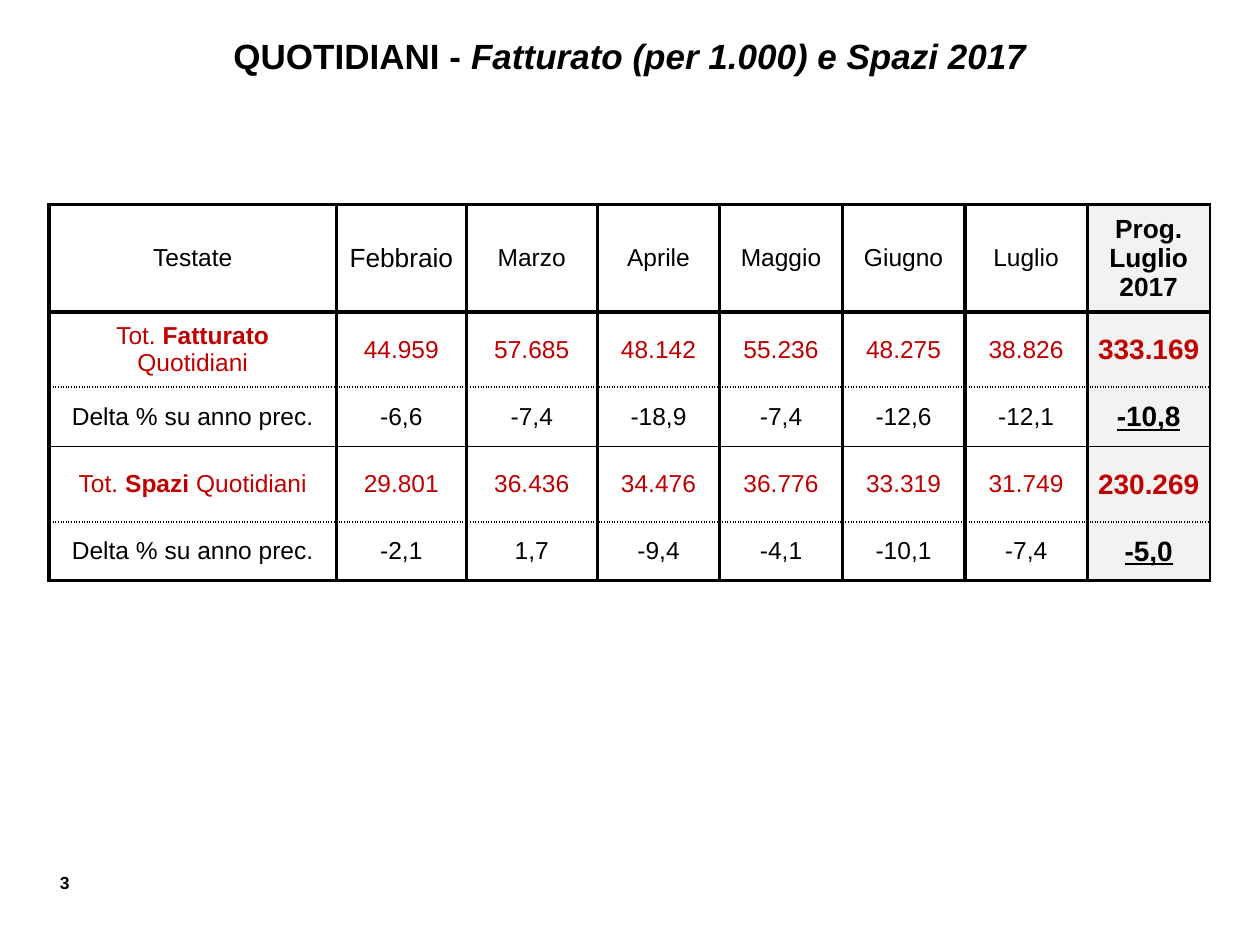
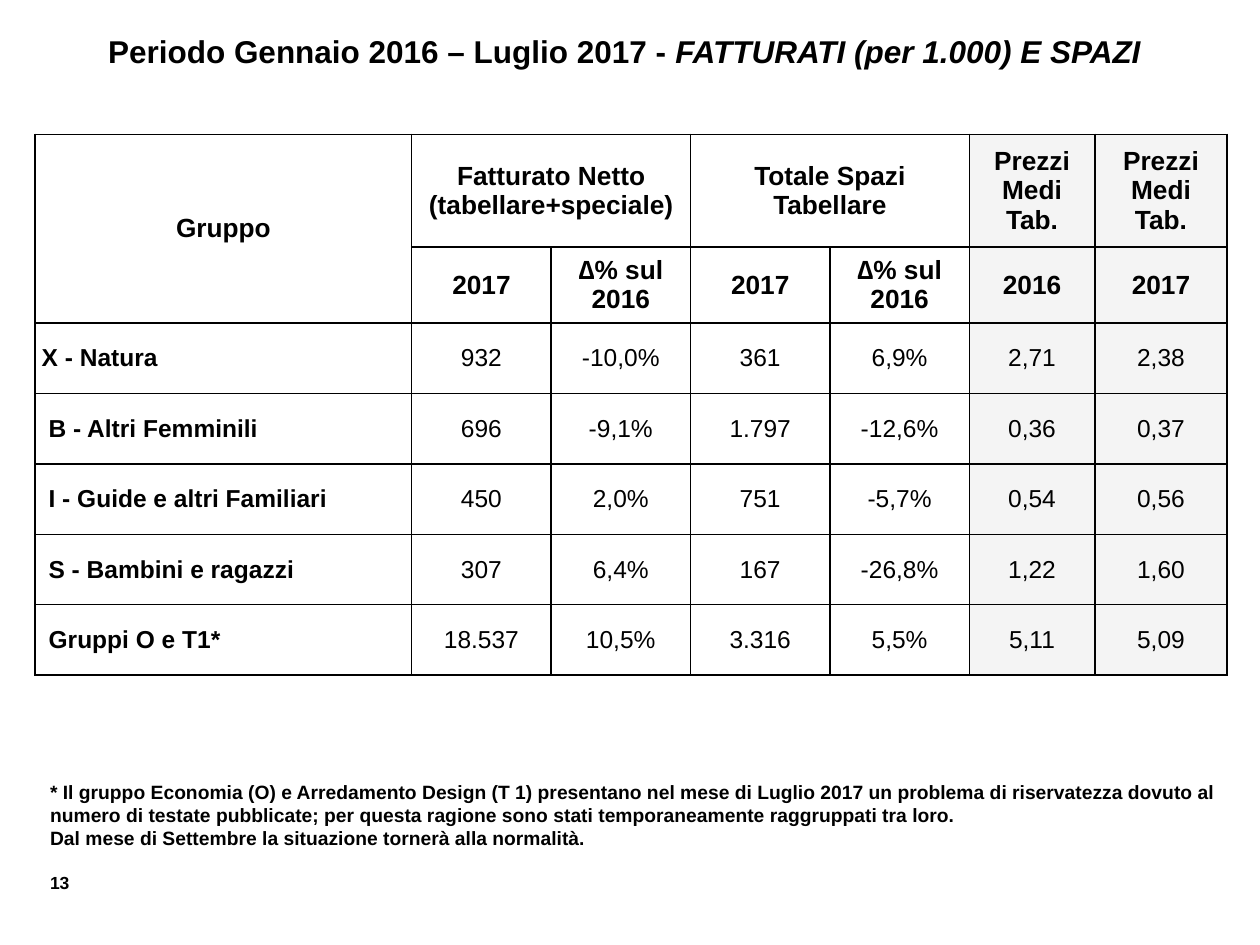
from dataclasses import dataclass
from typing import NamedTuple

from lxml import etree
from pptx import Presentation
from pptx.dml.color import RGBColor
from pptx.enum.text import MSO_ANCHOR, PP_ALIGN
from pptx.oxml.ns import qn
from pptx.util import Cm, Pt

LEFT, CENTER, RIGHT = PP_ALIGN.LEFT, PP_ALIGN.CENTER, PP_ALIGN.RIGHT
MIDDLE = MSO_ANCHOR.MIDDLE
FONT = "Arial"
COLORS = {"ink": "000000", "total": "C00000", "shade": "F2F2F2"}


class Run(NamedTuple):
    text: str
    size: float = 14
    bold: bool = False
    italic: bool = False
    underline: bool = False
    color: str = "ink"


class Rule(NamedTuple):
    points: float
    dash: str = "solid"


class Box(NamedTuple):
    left: float
    top: float
    width: float
    height: float


@dataclass
class Entry:
    runs: list[Run]
    align: PP_ALIGN = CENTER
    padded: bool = False
    indent: float = 0


@dataclass
class Grid:
    left: float
    top: float
    widths: list[float]
    heights: list[float]
    row_rules: list[Rule]
    column_rules: list[Rule]
    shaded_from: int
    opacity: int
    rows: list[list[Entry | None]]
    merges: list[tuple[int, int, int, int]]


THICK, THIN, DOTTED = Rule(2.25), Rule(1), Rule(1, "sysDot")


def write_runs(paragraph, runs: list[Run], align: PP_ALIGN) -> None:
    paragraph.alignment = align
    for run in runs:
        piece = paragraph.add_run()
        piece.text = run.text
        font = piece.font
        font.name, font.size = FONT, Pt(run.size)
        font.bold, font.italic, font.underline = run.bold, run.italic, run.underline
        font.color.rgb = RGBColor.from_string(COLORS[run.color])


def add_text(slide, box: Box, paragraphs: list[list[Run]], align: PP_ALIGN) -> None:
    frame = slide.shapes.add_textbox(*(Cm(length) for length in box)).text_frame
    frame.word_wrap = True
    for index, runs in enumerate(paragraphs):
        paragraph = frame.add_paragraph() if index else frame.paragraphs[0]
        write_runs(paragraph, runs, align)


def add_border(properties, side: str, rule: Rule) -> None:
    line = etree.SubElement(properties, qn(f"a:ln{side}"), w=str(Pt(rule.points)))
    fill = etree.SubElement(line, qn("a:solidFill"))
    etree.SubElement(fill, qn("a:srgbClr"), val=COLORS["ink"])
    etree.SubElement(line, qn("a:prstDash"), val=rule.dash)


def shade(cell, opacity: int) -> None:
    cell.fill.solid()
    cell.fill.fore_color.rgb = RGBColor.from_string(COLORS["shade"])
    if opacity < 100:
        color = cell._tc.tcPr.find(qn("a:solidFill")).find(qn("a:srgbClr"))
        etree.SubElement(color, qn("a:alpha"), val=str(opacity * 1000))


def fill_entry(cell, entry: Entry) -> None:
    side, edge = (0.25, 0.13) if entry.padded else (0, 0)
    cell.margin_left, cell.margin_right = Cm(side + entry.indent), Cm(side)
    cell.margin_top = cell.margin_bottom = Cm(edge)
    cell.vertical_anchor = MIDDLE
    write_runs(cell.text_frame.paragraphs[0], entry.runs, entry.align)


def add_grid(slide, grid: Grid) -> None:
    table = slide.shapes.add_table(
        len(grid.heights), len(grid.widths), Cm(grid.left), Cm(grid.top),
        Cm(sum(grid.widths)), Cm(sum(grid.heights)),
    ).table
    table.first_row = table.horz_banding = False
    for column, width in zip(table.columns, grid.widths):
        column.width = Cm(width)
    for row, height in zip(table.rows, grid.heights):
        row.height = Cm(height)
    for top, left, bottom, right in grid.merges:
        table.cell(top, left).merge(table.cell(bottom, right))
    for r, entries in enumerate(grid.rows):
        for c, entry in enumerate(entries):
            cell = table.cell(r, c)
            properties = cell._tc.get_or_add_tcPr()
            add_border(properties, "L", grid.column_rules[c])
            add_border(properties, "R", grid.column_rules[c + 1])
            add_border(properties, "T", grid.row_rules[r])
            add_border(properties, "B", grid.row_rules[r + 1])
            if c >= grid.shaded_from:
                shade(cell, grid.opacity)
            else:
                cell.fill.background()
            if entry:
                fill_entry(cell, entry)


def add_page(deck, title_box: Box, title: list[Run], number: int):
    slide = deck.slides.add_slide(deck.slide_layouts[6])
    add_text(slide, Box(0.48, 17.45, 1.17, 0.69),
             [[Run(str(number), 10, bold=True)]], RIGHT)
    add_text(slide, title_box, [title], CENTER)
    return slide


def daily_row(label: list[Run], values: str, is_total: bool) -> list[Entry]:
    color = "total" if is_total else "ink"
    *months, progressive = values.split()
    return [
        Entry([run._replace(color=color) for run in label], padded=True),
        *(Entry([Run(value, color=color)]) for value in months),
        Entry([Run(progressive, 16, True, underline=not is_total, color=color)]),
    ]


def daily_grid() -> Grid:
    months = ["Testate", "Febbraio", "Marzo", "Aprile", "Maggio", "Giugno", "Luglio"]
    header = [Entry([Run(month, 15 if month == "Febbraio" else 14)], padded=True)
              for month in months]
    header.append(Entry([Run("Prog. Luglio 2017", 15, True)], padded=True))
    delta = [Run("Delta % su anno prec.")]

    def total(subject: str) -> list[Run]:
        return [Run("Tot. "), Run(f"{subject} ", bold=True), Run("Quotidiani")]

    return Grid(
        left=0.99, top=4.12,
        widths=[5.79, 2.62, 2.64] + [2.47] * 5,
        heights=[2.16, 1.52, 1.2, 1.52, 1.18],
        row_rules=[THICK, THICK, DOTTED, THIN, DOTTED, THICK],
        column_rules=[THICK] * 8 + [THIN],
        shaded_from=7, opacity=100, merges=[],
        rows=[
            header,
            daily_row(total("Fatturato"),
                      "44.959 57.685 48.142 55.236 48.275 38.826 333.169", True),
            daily_row(delta, "-6,6 -7,4 -18,9 -7,4 -12,6 -12,1 -10,8", False),
            daily_row(total("Spazi"),
                      "29.801 36.436 34.476 36.776 33.319 31.749 230.269", True),
            daily_row(delta, "-2,1 1,7 -9,4 -4,1 -10,1 -7,4 -5,0", False),
        ],
    )


def heading_row(labels: list[str | None]) -> list[Entry | None]:
    return [Entry([Run(label, 15, True)], padded=True) if label else None
            for label in labels]


def group_row(group: str, values: str, indent: float = 0.27) -> list[Entry]:
    return [Entry([Run(group, bold=True)], LEFT, indent=indent),
            *(Entry([Run(value)]) for value in values.split())]


def group_grid() -> Grid:
    return Grid(
        left=0.71, top=2.71,
        widths=[7.59] + [2.81] * 4 + [2.53, 2.67],
        heights=[2.27, 1.52] + [1.42] * 5,
        row_rules=[THIN] * 8, column_rules=[THIN] * 8,
        shaded_from=5, opacity=80,
        merges=[(0, 0, 1, 0), (0, 1, 0, 2), (0, 3, 0, 4)],
        rows=[
            heading_row(["Gruppo", "Fatturato Netto (tabellare+speciale)", None,
                         "Totale Spazi Tabellare", None,
                         "Prezzi Medi Tab.", "Prezzi Medi Tab."]),
            heading_row([None, "2017", "∆% sul 2016", "2017", "∆% sul 2016",
                         "2016", "2017"]),
            group_row("X - Natura", "932 -10,0% 361 6,9% 2,71 2,38", 0.13),
            group_row("B - Altri Femminili", "696 -9,1% 1.797 -12,6% 0,36 0,37"),
            group_row("I - Guide e altri Familiari", "450 2,0% 751 -5,7% 0,54 0,56"),
            group_row("S - Bambini e ragazzi", "307 6,4% 167 -26,8% 1,22 1,60"),
            group_row("Gruppi O e T1*", "18.537 10,5% 3.316 5,5% 5,11 5,09"),
        ],
    )


def main() -> None:
    deck = Presentation()
    deck.slide_width, deck.slide_height = Cm(25.4), Cm(19.05)

    dailies = add_page(
        deck, Box(0, 0.58, 25.4, 1.12),
        [Run("QUOTIDIANI - ", 20, True),
         Run("Fatturato (per 1.000) e Spazi 2017", 20, True, True)], 3)
    add_grid(dailies, daily_grid())

    groups = add_page(
        deck, Box(0.69, 0.53, 23.8, 1.8),
        [Run("Periodo Gennaio 2016 – Luglio 2017 - ", 18, True),
         Run("FATTURATI (per 1.000) E SPAZI", 18, True, True)], 13)
    add_grid(groups, group_grid())
    footnote = [
        "* Il gruppo Economia (O) e Arredamento Design (T 1) presentano nel mese di "
        "Luglio 2017 un problema di riservatezza dovuto al numero di testate "
        "pubblicate; per questa ragione sono stati temporaneamente raggruppati tra loro.",
        "Dal mese di Settembre la situazione tornerà alla normalità.",
    ]
    add_text(groups, Box(0.76, 15.6, 24.33, 2.13),
             [[Run(sentence, 11, True)] for sentence in footnote], LEFT)

    deck.save("out.pptx")


if __name__ == "__main__":
    main()
